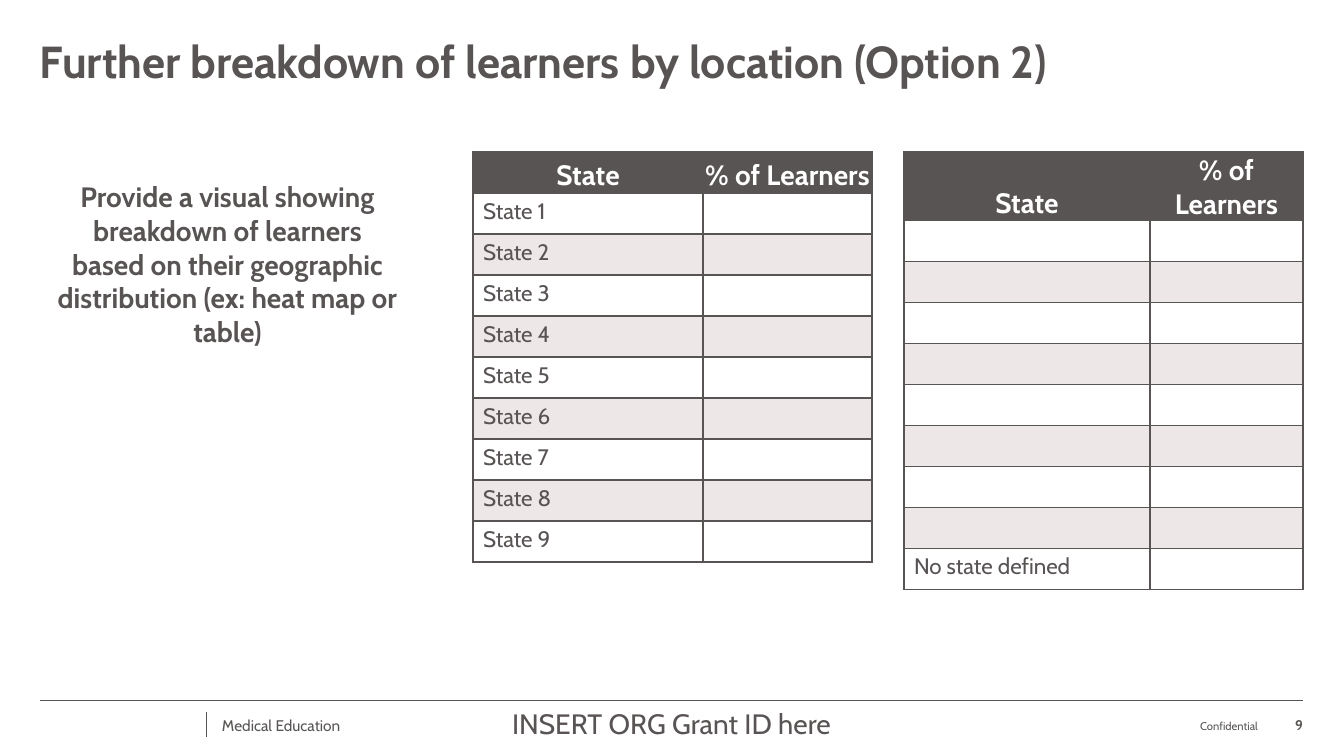
from pptx import Presentation
from pptx.dml.color import RGBColor as Rgb
from pptx.enum.shapes import MSO_CONNECTOR as Connector
from pptx.enum.text import MSO_ANCHOR as Anchor, PP_ALIGN as Align
from pptx.oxml.ns import qn
from pptx.util import Pt
from lxml.etree import SubElement

SCALE = 12192000 / 1344  # EMU per px
FONT = "Cabin"
COLORS = {"ink": "595454", "white": "FFFFFF", "band": "EEE7E7"}
ROW_HEIGHT = 41


def px(length):
    return round(length * SCALE)


def color(name):
    return Rgb.from_string(COLORS[name])


def style(paragraph, size, bold=False, ink="ink", align=Align.LEFT):
    paragraph.alignment = align
    for run in paragraph.runs:
        run.font.name = FONT
        run.font.size = Pt(size)
        run.font.bold = bold
        run.font.color.rgb = color(ink)


def add_text(slide, box, text, size, bold=False, align=Align.LEFT,
             anchor=Anchor.TOP, spacing=None):
    frame = slide.shapes.add_textbox(*map(px, box)).text_frame
    frame.word_wrap = True
    frame.margin_left = frame.margin_right = 0
    frame.margin_top = frame.margin_bottom = 0
    frame.vertical_anchor = anchor
    frame.text = text
    paragraph = frame.paragraphs[0]
    style(paragraph, size, bold, align=align)
    if spacing:
        paragraph.line_spacing = spacing


def add_rule(slide, *ends):
    rule = slide.shapes.add_connector(Connector.STRAIGHT, *map(px, ends))
    rule.line.color.rgb = color("ink")
    rule.line.width = Pt(0.5)
    SubElement(rule._element.spPr, qn("a:effectLst"))


def fill_cell(cell, name):
    """Fill a cell and give it a thin border on all four sides."""
    properties = cell._tc.get_or_add_tcPr()
    for side in ("a:lnL", "a:lnR", "a:lnT", "a:lnB"):
        border = SubElement(properties, qn(side), w=str(Pt(1)))
        solid = SubElement(border, qn("a:solidFill"))
        SubElement(solid, qn("a:srgbClr"), val=COLORS["ink"])
    cell.fill.solid()
    cell.fill.fore_color.rgb = color(name)


def add_state_table(slide, left, top, widths, states):
    height = ROW_HEIGHT * (len(states) + 1)
    table = slide.shapes.add_table(
        len(states) + 1, 2, px(left), px(top), px(sum(widths)), px(height)).table
    for column, width in zip(table.columns, widths):
        column.width = px(width)
    for row in table.rows:
        row.height = px(ROW_HEIGHT)

    # Header row
    for index, heading in enumerate(("State", "% of Learners")):
        cell = table.cell(0, index)
        cell.text = heading
        style(cell.text_frame.paragraphs[0], 20, True, "white", Align.CENTER)
        cell.vertical_anchor = Anchor.BOTTOM
        cell.margin_left = cell.margin_right = cell.margin_top = px(1)
        cell.margin_bottom = 0
        fill_cell(cell, "ink")

    # Banded body rows
    for number, state in enumerate(states, 1):
        for index in range(2):
            fill_cell(table.cell(number, index), "white" if number % 2 else "band")
        if state:
            cell = table.cell(number, 0)
            cell.text = state
            style(cell.text_frame.paragraphs[0], 16)


def add_footer(slide, left, top, width):
    right = left + width
    add_rule(slide, left, top, right, top)
    add_rule(slide, left + 166, top + 12, left + 166, top + 37)
    add_text(slide, (left + 182, top + 13, 260, 25), "Medical Education", 11,
             anchor=Anchor.MIDDLE)
    add_text(slide, (left + 366, top + 6, 531, 36), "INSERT ORG Grant ID here",
             20, align=Align.CENTER)
    add_text(slide, (right - 399, top + 8, 354, 25), "Confidential", 8,
             align=Align.RIGHT, anchor=Anchor.BOTTOM)
    add_text(slide, (right - 35, top + 8, 35, 25), "9", 10, True,
             align=Align.RIGHT, anchor=Anchor.BOTTOM)


def build_location_slide(presentation):
    slide = presentation.slides.add_slide(presentation.slide_layouts[6])
    # Title and instruction
    add_text(slide, (40, 40, 1263, 53),
             "Further breakdown of learners by location (Option 2)", 32, True,
             spacing=0.9)
    add_text(slide, (57, 180, 341, 220),
             "Provide a visual showing breakdown of learners based on their "
             "geographic distribution (ex: heat map or table)", 20, True,
             align=Align.CENTER)
    # State tables
    add_state_table(slide, 473, 152, (230, 169),
                    [f"State {number}" for number in range(1, 10)])
    add_state_table(slide, 904, 152, (246, 153), [""] * 8 + ["No state defined"])
    add_footer(slide, 40, 700, 1263)


def main():
    presentation = Presentation()
    presentation.slide_width = px(1344)
    presentation.slide_height = px(756)
    build_location_slide(presentation)
    presentation.save("out.pptx")


if __name__ == "__main__":
    main()
